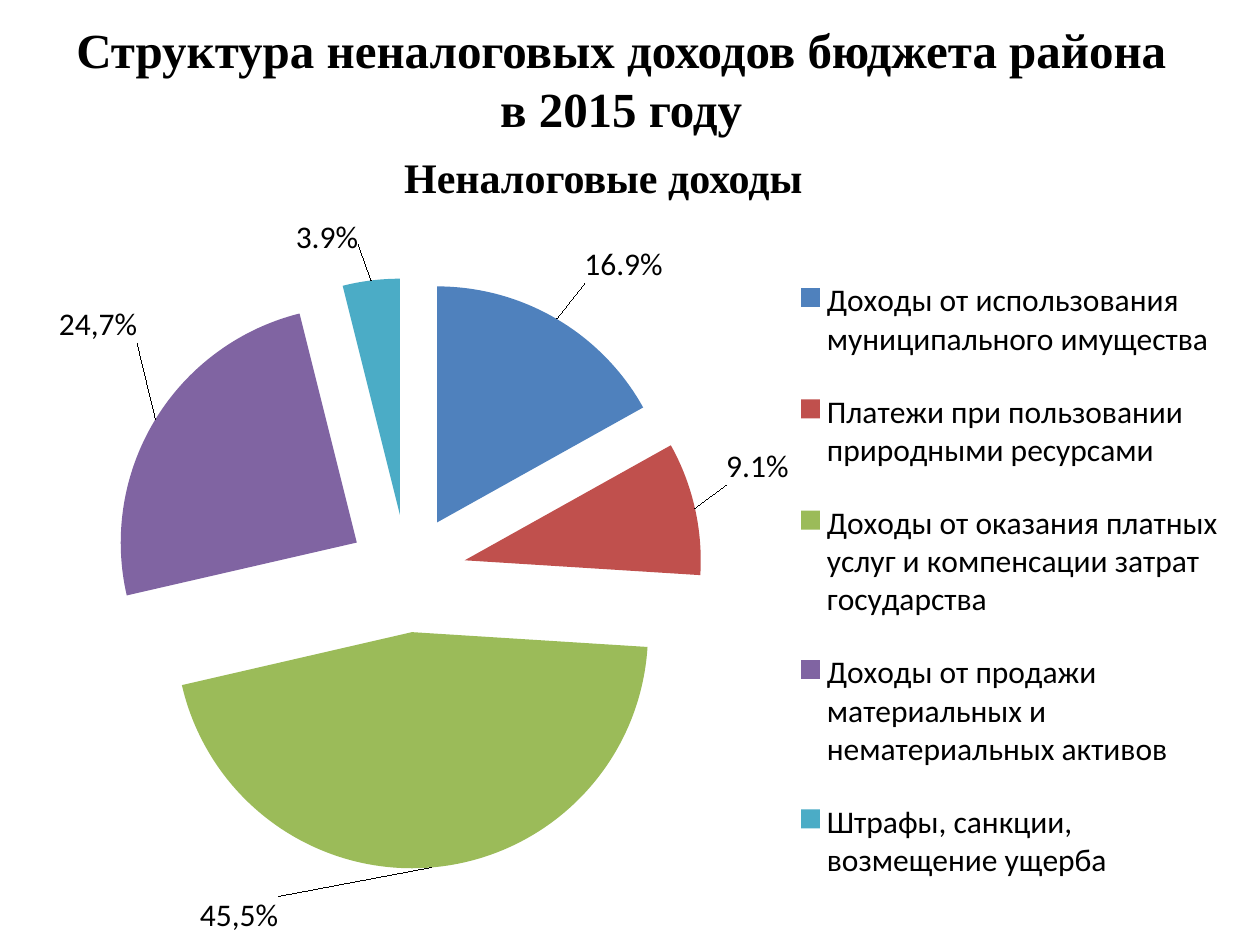
from dataclasses import dataclass

from lxml import etree
from pptx import Presentation
from pptx.chart.data import CategoryChartData
from pptx.dml.color import RGBColor
from pptx.enum.chart import XL_CHART_TYPE, XL_LABEL_POSITION, XL_LEGEND_POSITION
from pptx.enum.text import MSO_ANCHOR, PP_ALIGN
from pptx.oxml.ns import qn
from pptx.util import Inches, Pt

PIE = XL_CHART_TYPE.PIE
OUTSIDE = XL_LABEL_POSITION.OUTSIDE_END
LEGEND_RIGHT = XL_LEGEND_POSITION.RIGHT
MIDDLE = MSO_ANCHOR.MIDDLE
CENTER = PP_ALIGN.CENTER

BLACK = RGBColor(0x00, 0x00, 0x00)
BLUE = RGBColor(0x4F, 0x81, 0xBD)
RED = RGBColor(0xC0, 0x50, 0x4D)
GREEN = RGBColor(0x9B, 0xBB, 0x59)
PURPLE = RGBColor(0x80, 0x64, 0xA2)
TEAL = RGBColor(0x4B, 0xAC, 0xC6)

HEADING = {"name": "Times New Roman", "bold": True}
CHART_TEXT = {"name": "Calibri", "size": Pt(18)}
TITLE_TEXT = {**HEADING, "size": Pt(28)}
SUBTITLE_TEXT = {**HEADING, "size": Pt(24)}
EXPLOSION = 25


@dataclass(frozen=True)
class Income:
    source: str
    share: float
    color: RGBColor
    label_shift: tuple[float, float]  # fractions of the chart size
    label: str = ""  # replaces the value when given


INCOMES = [
    Income("Доходы от использования муниципального имущества", 0.169, BLUE, (0.02, -0.04)),
    Income("Платежи при пользовании природными ресурсами", 0.091, RED, (0.02, -0.03)),
    Income("Доходы от оказания платных услуг и компенсации затрат государства",
           0.454, GREEN, (-0.16, 0.03), "45,5%"),
    Income("Доходы от продажи материальных и нематериальных активов",
           0.247, PURPLE, (-0.01, -0.1), "24,7%"),
    Income("Штрафы, санкции, возмещение ущерба", 0.039, TEAL, (-0.01, -0.04)),
]


def format_font(font, values: dict) -> None:
    for attribute, value in values.items():
        setattr(font, attribute, value)
    font.color.rgb = BLACK


def manual_layout(**values) -> etree._Element:
    """Build a c:layout element from its child names and values."""
    layout = etree.Element(qn("c:layout"))
    manual = etree.SubElement(layout, qn("c:manualLayout"))
    for name, value in values.items():
        etree.SubElement(manual, qn(f"c:{name}")).set("val", str(value))
    return layout


def edge_layout(x: float, y: float, w: float, h: float) -> etree._Element:
    return manual_layout(xMode="edge", yMode="edge", x=x, y=y, w=w, h=h)


def style_slice(point, income: Income) -> None:
    point.format.fill.solid()
    point.format.fill.fore_color.rgb = income.color
    label = point.data_label
    if income.label:
        run = label.text_frame.paragraphs[0].add_run()
        run.text = income.label
        format_font(run.font, CHART_TEXT)
    label.position = OUTSIDE


def add_income_chart(slide) -> None:
    data = CategoryChartData(number_format="0.0%")
    data.categories = [income.source for income in INCOMES]
    data.add_series("Неналоговые доходы", [income.share for income in INCOMES])
    chart = slide.shapes.add_chart(
        PIE, Inches(0.22), Inches(1.73), Inches(9.56), Inches(5.7), data).chart
    chart.has_title = False
    format_font(chart.font, CHART_TEXT)

    chart.has_legend = True
    legend = chart.legend
    legend.position = LEGEND_RIGHT
    legend.include_in_layout = False
    legend_position = legend._element.find(qn("c:legendPos"))
    legend_position.addnext(edge_layout(0.63, 0.04, 0.37, 0.93))

    plot = chart.plots[0]
    plot.vary_by_categories = True
    plot_area = plot._element.getparent()
    for old_layout in plot_area.findall(qn("c:layout")):
        plot_area.remove(old_layout)
    square = edge_layout(0.07, 0.08, 0.49, 0.83)
    etree.SubElement(square[0], qn("c:layoutTarget")).set("val", "inner")
    square[0].insert(0, square[0][-1])
    plot_area.insert(0, square)

    series = plot.series[0]
    explosion = etree.Element(qn("c:explosion"))
    explosion.set("val", str(EXPLOSION))
    series._element.find(qn("c:tx")).addnext(explosion)

    labels = series.data_labels
    labels.show_value = True
    labels.number_format = "0.0%"
    labels.number_format_is_linked = False
    labels.position = OUTSIDE
    format_font(labels.font, CHART_TEXT)
    for index, income in enumerate(INCOMES):
        style_slice(series.points[index], income)
    label_elements = labels._element.findall(qn("c:dLbl"))
    for element, income in zip(label_elements, INCOMES):
        x, y = income.label_shift
        element.find(qn("c:idx")).addnext(manual_layout(x=x, y=y))


def add_title(slide, text: str) -> None:
    title = slide.shapes.title
    title.left, title.top = Inches(0.43), Inches(0)
    title.width, title.height = Inches(9), Inches(1.25)
    frame = title.text_frame
    frame.text = text
    frame.vertical_anchor = MIDDLE
    frame.paragraphs[0].alignment = CENTER
    format_font(frame.paragraphs[0].runs[0].font, TITLE_TEXT)


def add_subtitle(slide, text: str) -> None:
    frame = slide.shapes.add_textbox(
        Inches(3.11), Inches(1.15), Inches(3.7), Inches(0.51)).text_frame
    frame.word_wrap = True
    frame.text = text
    format_font(frame.paragraphs[0].runs[0].font, SUBTITLE_TEXT)


def main() -> None:
    presentation = Presentation()
    presentation.slide_width, presentation.slide_height = Inches(10), Inches(7.5)
    slide = presentation.slides.add_slide(presentation.slide_layouts[5])
    add_title(slide, "Структура неналоговых доходов бюджета района в 2015 году")
    add_income_chart(slide)
    add_subtitle(slide, "Неналоговые доходы")
    presentation.save("out.pptx")


if __name__ == "__main__":
    main()
